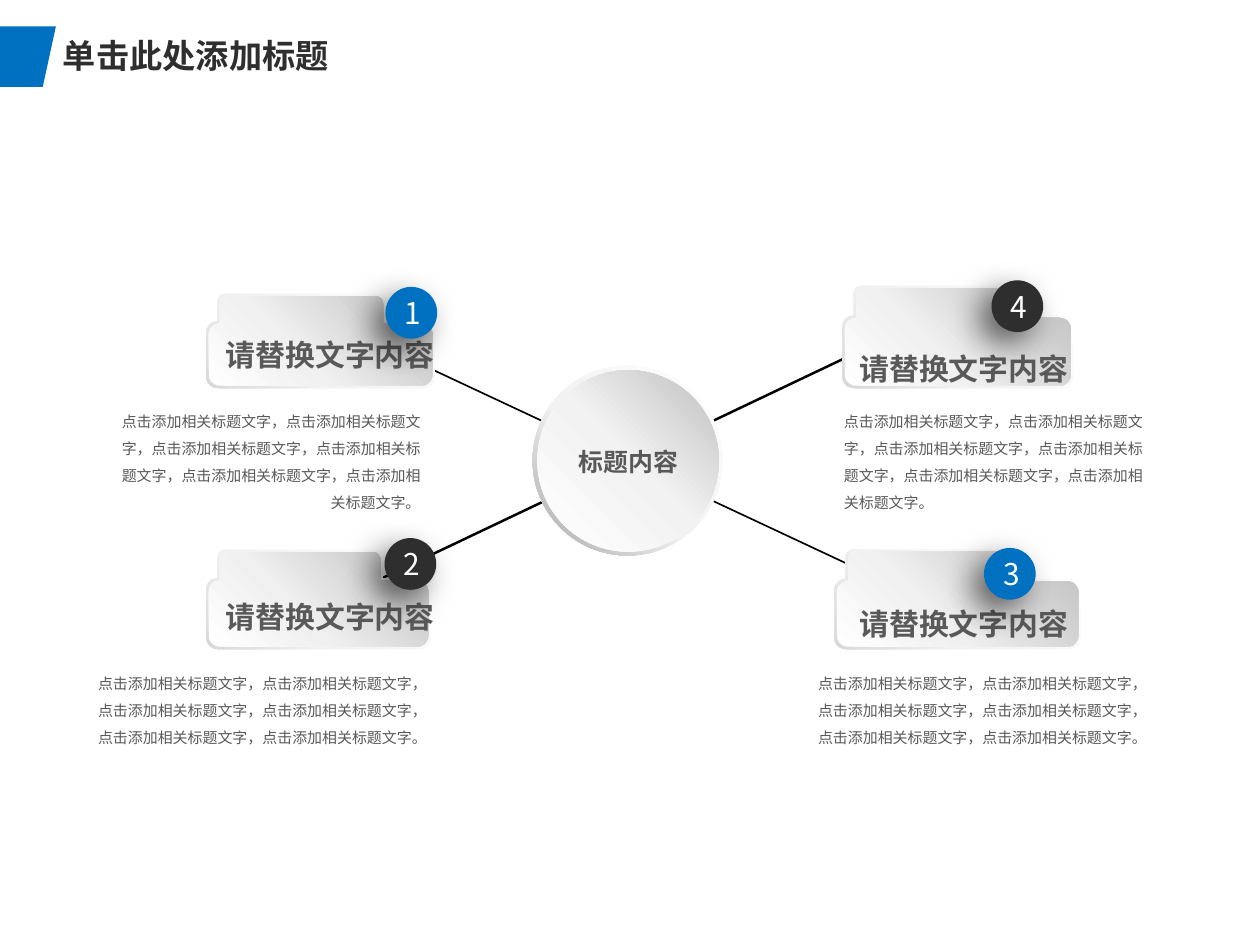
from math import cos, radians, sin

from lxml import etree
from pptx import Presentation
from pptx.dml.color import RGBColor
from pptx.enum.shapes import MSO_CONNECTOR, MSO_SHAPE
from pptx.enum.text import MSO_ANCHOR, PP_ALIGN
from pptx.oxml.ns import qn
from pptx.util import Cm, Pt

STRAIGHT = MSO_CONNECTOR.STRAIGHT
DONUT, OVAL = MSO_SHAPE.DONUT, MSO_SHAPE.OVAL
LEFT, CENTER, RIGHT = PP_ALIGN.LEFT, PP_ALIGN.CENTER, PP_ALIGN.RIGHT
MIDDLE = MSO_ANCHOR.MIDDLE

BLUE = RGBColor(0x00, 0x70, 0xC0)
CHARCOAL = RGBColor(0x2E, 0x2E, 0x2E)
GRAY = RGBColor(0x59, 0x59, 0x59)
WHITE = RGBColor(0xFF, 0xFF, 0xFF)
BLACK = RGBColor(0x00, 0x00, 0x00)
PALE = RGBColor(0xF2, 0xF2, 0xF2)
MIST = RGBColor(0xF0, 0xF0, 0xF0)
LIGHT = RGBColor(0xD9, 0xD9, 0xD9)
SILVER = RGBColor(0xBF, 0xBF, 0xBF)
STEEL = RGBColor(0xA6, 0xA6, 0xA6)

TO_LOWER_LEFT, TO_UPPER_RIGHT = 225, 45

presentation = Presentation()
presentation.slide_width = Cm(26.8)
presentation.slide_height = Cm(20.09)
slide = presentation.slides.add_slide(presentation.slide_layouts[6])
shapes = slide.shapes


def shade(shape, angle, middle, middle_color, end_color):
    """Fill with a gradient from white, without outline or shadow."""
    shape.shadow.inherit = False
    shape.line.fill.background()
    shape.fill.gradient()
    shape.fill.gradient_angle = angle
    stops = shape.element.spPr.find(".//" + qn("a:gsLst"))
    for stop in list(stops):
        stops.remove(stop)
    for position, color in ((0, WHITE), (middle, middle_color), (100, end_color)):
        stop = etree.SubElement(stops, qn("a:gs"), pos=str(position * 1000))
        etree.SubElement(stop, qn("a:srgbClr"), val=str(color))


def add_text(text, left, top, width, height, size, font, color, bold=False,
             align=LEFT, spacing=None, inset=None):
    box = shapes.add_textbox(Cm(left), Cm(top), Cm(width), Cm(height))
    frame = box.text_frame
    frame.word_wrap = True
    if inset is not None:
        frame.margin_left = frame.margin_right = Cm(inset)
        frame.margin_top = frame.margin_bottom = Cm(inset)
    paragraph = frame.paragraphs[0]
    paragraph.text = text
    paragraph.alignment = align
    if spacing:
        paragraph.line_spacing = spacing
    paragraph.font.size = Pt(size)
    paragraph.font.name = font
    paragraph.font.bold = bold
    paragraph.font.color.rgb = color


# Title with its slanted marker
builder = shapes.build_freeform(Cm(0), Cm(0.56))
builder.add_line_segments(
    [(Cm(1.19), Cm(0.56)), (Cm(0.91), Cm(1.85)), (Cm(0), Cm(1.85))])
marker = builder.convert_to_shape()
marker.shadow.inherit = False
marker.fill.solid()
marker.fill.fore_color.rgb = BLUE
marker.line.fill.background()
add_text("单击此处添加标题", 1.09, 0.63, 23.55, 1.12, 20, "Calibri", CHARCOAL, True)

# Crossing lines between the cards
for x1, y1, x2, y2, weight in ((18.67, 12.29, 8.05, 7.32, 1),
                               (6.68, 12.98, 20.04, 6.63, 1.5)):
    connector = shapes.add_connector(STRAIGHT, Cm(x1), Cm(y1), Cm(x2), Cm(y2))
    connector.line.color.rgb = BLACK
    connector.line.width = Pt(weight)
    etree.SubElement(connector.element.spPr, qn("a:effectLst"))

# Folder cards: left, top, right, bottom, right end of the tab, shoulder height
CARDS = (
    (4.39, 6.25, 9.25, 8.25, 8.20, 6.83),
    (4.39, 11.69, 9.16, 13.80, 8.14, 12.29),
    (17.92, 6.08, 22.83, 8.25, 21.78, 6.71),
    (17.75, 11.68, 22.99, 13.80, 21.86, 12.31),
)
TAB_RADIUS, BODY_RADIUS = 0.16, 0.24
LAYERS = ((0, TO_LOWER_LEFT, 62, PALE, LIGHT),
          (0.05, TO_UPPER_RIGHT, 39, MIST, SILVER))
for card in CARDS:
    for inset, angle, middle, middle_color, end_color in LAYERS:
        left, top, shoulder = card[0] + inset, card[1] + inset, card[5] + inset
        right, bottom, tab_right = (card[i] - inset for i in (2, 3, 4))
        tab_left = left + BODY_RADIUS
        # Corner centre, radius and first angle; a radius of 0 is a sharp corner
        corners = (
            (tab_left + TAB_RADIUS, top + TAB_RADIUS, TAB_RADIUS, 180),
            (tab_right - TAB_RADIUS, top + TAB_RADIUS, TAB_RADIUS, 270),
            (tab_right, shoulder, 0, 0),
            (right - BODY_RADIUS, shoulder + BODY_RADIUS, BODY_RADIUS, 270),
            (right - BODY_RADIUS, bottom - BODY_RADIUS, BODY_RADIUS, 0),
            (left + BODY_RADIUS, bottom - BODY_RADIUS, BODY_RADIUS, 90),
            (left + BODY_RADIUS, shoulder + BODY_RADIUS, BODY_RADIUS, 180),
        )
        points = [(Cm(x + radius * cos(radians(first + step))),
                   Cm(y + radius * sin(radians(first + step))))
                  for x, y, radius, first in corners
                  for step in (range(0, 91, 15) if radius else (0,))]
        builder = shapes.build_freeform(*points[0])
        builder.add_line_segments(points[1:])
        shade(builder.convert_to_shape(), angle, middle, middle_color, end_color)

# Card headings
for left, top, width in ((4.55, 7.04, 6.30), (18.03, 7.34, 6.07),
                         (4.55, 12.60, 9.47), (18.03, 12.75, 5.87)):
    add_text("请替换文字内容", left, top, width, 1.02, 18, "Calibri", GRAY, True)

# Central disc
rim = shapes.add_shape(DONUT, Cm(11.33), Cm(7.77), Cm(4.04), Cm(4.04))
rim.adjustments[0] = 0.05
shade(rim, TO_LOWER_LEFT, 55, PALE, STEEL)
disc = shapes.add_shape(OVAL, Cm(11.43), Cm(7.87), Cm(3.86), Cm(3.86))
shade(disc, TO_UPPER_RIGHT, 51, PALE, SILVER)
add_text("标题内容", 12.01, 9.50, 2.72, 0.64, 15, "Noto Sans CJK SC", GRAY, True,
         CENTER, inset=0)

# Descriptions: the same clause six times
description = "，".join(["点击添加相关标题文字"] * 6) + "。"
for left, top, width, height, align in ((2.03, 8.46, 7.16, 2.57, RIGHT),
                                        (1.70, 14.02, 7.62, 1.98, RIGHT),
                                        (17.15, 14.02, 7.59, 1.98, LEFT),
                                        (17.70, 8.46, 7.16, 2.57, LEFT)):
    add_text(description, left, top, width, height, 9, "Arial", GRAY,
             align=align, spacing=1.5)

# Numbered badges with a soft shadow to the lower left
BADGES = ((8.20, 6.10, BLUE), (8.18, 11.44, CHARCOAL),
          (20.93, 11.65, BLUE), (21.09, 5.96, CHARCOAL))
for number, (left, top, color) in enumerate(BADGES, 1):
    badge = shapes.add_shape(OVAL, Cm(left), Cm(top), Cm(1.1), Cm(1.1))
    badge.fill.solid()
    badge.fill.fore_color.rgb = color
    badge.line.fill.background()
    badge.shadow.inherit = False
    shadow = etree.SubElement(
        badge.element.spPr.find(qn("a:effectLst")), qn("a:outerShdw"),
        blurRad=str(Pt(20)), dist=str(Pt(10)), dir=str(135 * 60000),
        algn="tr", rotWithShape="0")
    shadow_color = etree.SubElement(shadow, qn("a:srgbClr"), val=str(BLACK))
    etree.SubElement(shadow_color, qn("a:alpha"), val="60000")
    badge.text_frame.vertical_anchor = MIDDLE
    paragraph = badge.text_frame.paragraphs[0]
    paragraph.text = str(number)
    paragraph.alignment = CENTER
    paragraph.font.size = Pt(18)
    paragraph.font.name = "Noto Sans CJK SC"
    paragraph.font.color.rgb = WHITE

presentation.save("out.pptx")
